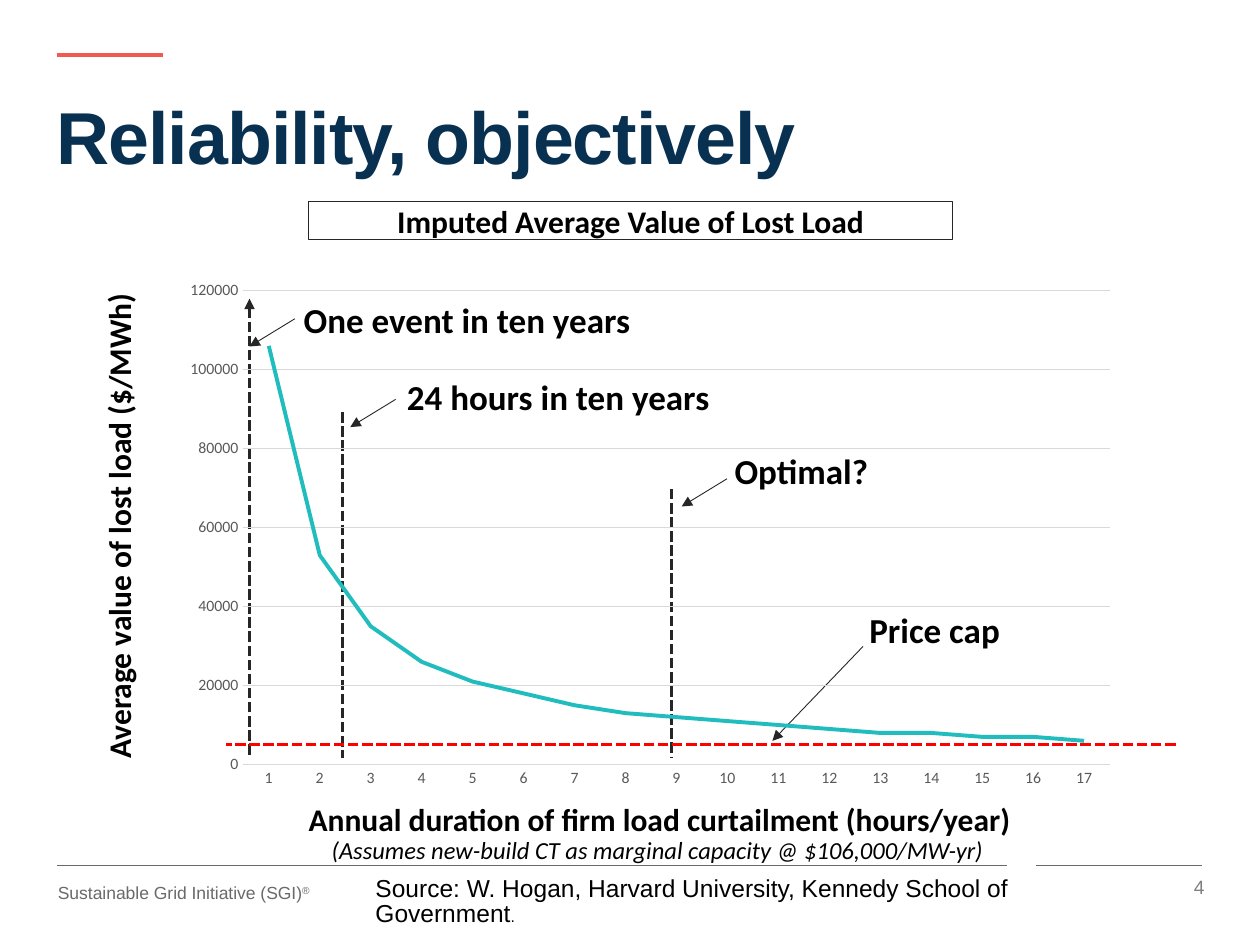
from lxml.etree import SubElement
from pptx import Presentation
from pptx.chart.data import CategoryChartData
from pptx.dml.color import RGBColor
from pptx.enum.chart import XL_CHART_TYPE, XL_TICK_MARK
from pptx.enum.dml import MSO_LINE
from pptx.enum.shapes import MSO_CONNECTOR, MSO_SHAPE
from pptx.enum.text import MSO_ANCHOR, PP_ALIGN
from pptx.oxml.ns import qn
from pptx.util import Inches, Pt

BLACK = RGBColor(0x00, 0x00, 0x00)
INK = RGBColor(0x26, 0x26, 0x26)
NAVY = RGBColor(0x08, 0x30, 0x50)
CORAL = RGBColor(0xF1, 0x5A, 0x4E)
RED = RGBColor(0xFF, 0x00, 0x00)
TEAL = RGBColor(0x21, 0xBD, 0xBE)
GREY = RGBColor(0x6A, 0x6A, 0x6A)
MID = RGBColor(0x80, 0x80, 0x80)
LABEL = RGBColor(0x59, 0x59, 0x59)
PALE = RGBColor(0xD9, 0xD9, 0xD9)

# The slide is a grid of 100 columns by 75 rows
COLS, ROWS = 100, 75
CELL = Inches(0.1)


def grid(*cells):
    return [round(n * CELL) for n in cells]


def text(slide, place, words, size=18, color=BLACK, face="Calibri", bold=False,
         slant=False, align=PP_ALIGN.LEFT, anchor=MSO_ANCHOR.TOP, pad=(0, 0),
         lead=None, turn=0, track=None, edge=None, tail="", small=None, lift=None):
    """Put words in a box; tail is a closing run, smaller or raised."""
    if edge is None:
        box = slide.shapes.add_textbox(*grid(*place))
    else:
        box = slide.shapes.add_shape(MSO_SHAPE.RECTANGLE, *grid(*place))
        box.shadow.inherit = False
        box.fill.background()
        box.line.color.rgb = edge
        box.line.width = Pt(0.75)
    box.rotation = turn
    frame = box.text_frame
    frame.word_wrap = True
    frame.vertical_anchor = anchor
    frame.margin_left = frame.margin_right = grid(pad[0])[0]
    frame.margin_top = frame.margin_bottom = grid(pad[1])[0]
    para = frame.paragraphs[0]
    para.alignment = align
    para.line_spacing = lead
    for part in filter(None, (words, tail)):
        run = para.add_run()
        run.text = part
        font = run.font
        font.name, font.size = face, Pt(size)
        font.bold, font.italic = bold, slant
        font.color.rgb = color
        if track:
            font._element.set("spc", str(track))
    if tail:
        font.size = Pt(small or size)
        if lift:
            font._element.set("baseline", str(lift))


def line(slide, start, end, color=INK, width=1, dash=False, arrow=False):
    link = slide.shapes.add_connector(MSO_CONNECTOR.STRAIGHT, *grid(*start, *end))
    link.line.color.rgb = color
    link.line.width = Pt(width)
    if dash:
        link.line.dash_style = MSO_LINE.SQUARE_DOT
    if arrow:
        SubElement(link.line._get_or_add_ln(), qn("a:tailEnd"), type="triangle")
    SubElement(link._element.spPr, qn("a:effectLst"))


def axis(side, stroke):
    side.major_tick_mark = side.minor_tick_mark = XL_TICK_MARK.NONE
    font = side.tick_labels.font
    font.name, font.size = "Calibri", Pt(9)
    font.color.rgb = LABEL
    stroke.color.rgb = PALE
    stroke.width = Pt(0.75)


def curve(slide, place):
    # Capacity cost spread over the hours, to the nearest thousand
    hours = range(1, 18)
    data = CategoryChartData()
    data.categories = [str(h) for h in hours]
    data.add_series("Series 1", [round(106000 / h, -3) for h in hours])
    chart = slide.shapes.add_chart(XL_CHART_TYPE.LINE, *grid(*place), data).chart
    chart.has_legend = chart.has_title = False
    chart.font.name, chart.font.size = "Calibri", Pt(10)
    chart.font.color.rgb = BLACK

    value = chart.value_axis
    value.minimum_scale, value.maximum_scale, value.major_unit = 0, 120000, 20000
    value.tick_labels.number_format = "General"
    value.tick_labels.number_format_is_linked = False
    value.format.line.fill.background()
    axis(value, value.major_gridlines.format.line)
    axis(chart.category_axis, chart.category_axis.format.line)

    plot = chart.plots[0]
    plot.vary_by_categories = False
    trace = plot.series[0]
    trace.smooth = False
    trace.format.line.color.rgb = TEAL
    trace.format.line.width = Pt(2.25)

    # Fix the inner plot area as shares of the chart
    area = chart._chartSpace.chart.plotArea
    frame = area.find(qn("c:layout"))
    if frame is None:
        frame = SubElement(area, qn("c:layout"))
        area.insert(0, frame)
    inner = SubElement(frame, qn("c:manualLayout"))
    rules = [("layoutTarget", "inner"), ("xMode", "edge"), ("yMode", "edge"),
             ("x", 0.08), ("y", 0.04), ("w", 0.9), ("h", 0.9)]
    for name, share in rules:
        SubElement(inner, qn("c:" + name), val=str(share))


def base(slide):
    # Rules, footer, source and page number
    line(slide, (4.5, 68.7), (79.9, 68.7), GREY)
    line(slide, (82.2, 68.7), (95.4, 68.7), GREY)
    line(slide, (4.5, 4.4), (12.9, 4.4), CORAL, 2.25)
    text(slide, (4.6, 70, 27.7, 1.7), "Sustainable Grid Initiative (SGI)", size=10,
         color=GREY, face="Arial", tail="®", lift=30000)
    text(slide, (28.9, 69.2, 63, 5.1),
         "Source: W. Hogan, Harvard University, Kennedy School of Government",
         size=14, face="Arial", pad=(0.9, 0.4), lead=Pt(14.5), tail=".", small=9)
    text(slide, (92.5, 69.1, 4, 2.5), "4", size=11, color=MID, face="Arial",
         align=PP_ALIGN.RIGHT, anchor=MSO_ANCHOR.MIDDLE, pad=(0.9, 0.4))


def main():
    deck = Presentation()
    deck.slide_width, deck.slide_height = grid(COLS, ROWS)
    slide = deck.slides.add_slide(deck.slide_layouts[6])
    base(slide)
    text(slide, (4.5, 7.5, 90.9, 8.2), "Reliability, objectively", size=42,
         color=NAVY, face="Arial", bold=True, pad=(0, 0.5), lead=0.9, track=-60)

    # Limits: hour marks and the price cap
    line(slide, (27.2, 32.7), (27.2, 60.2), width=2, dash=True)
    line(slide, (53.3, 38.8), (53.3, 60.1), width=2, dash=True)
    line(slide, (19.8, 59.9), (19.8, 23.7), width=2, dash=True, arrow=True)
    line(slide, (93.3, 59.1), (17.9, 59.1), RED, 2, dash=True)

    # Callouts: words, their corner, arrow start and end
    notes = [
        ("One event in ten years", (24.1, 23.7), (23.4, 25.3), (19.8, 27.5)),
        ("24 hours in ten years", (32.3, 29.8), (31.4, 31.7), (27.8, 33.9)),
        ("Optimal?", (58.3, 35.7), (57.7, 38), (54.1, 40.2)),
        ("Price cap", (69, 48.3), (68.5, 51.3), (61.3, 58.8)),
    ]
    for words, corner, start, end in notes:
        text(slide, (*corner, 27.4, 3.4), words, size=20, bold=True)
        line(slide, start, end, width=0.5, arrow=True)

    # Chart with its heading and axis names
    text(slide, (24.5, 16, 51.1, 3), "Imputed Average Value of Lost Load",
         bold=True, align=PP_ALIGN.CENTER, edge=INK)
    curve(slide, (13.2, 21.4, 76.4, 41.8))
    text(slide, (-10, 39.3, 38.8, 3), "Average value of lost load ($/MWh)",
         bold=True, turn=270)
    text(slide, (24.5, 63.5, 56.4, 3),
         "Annual duration of firm load curtailment (hours/year)", bold=True)
    text(slide, (24, 66.3, 56.4, 2.4),
         "(Assumes new-build CT as marginal capacity @ $106,000/MW-yr)",
         size=14, slant=True, align=PP_ALIGN.CENTER)
    deck.save("out.pptx")


if __name__ == "__main__":
    main()
